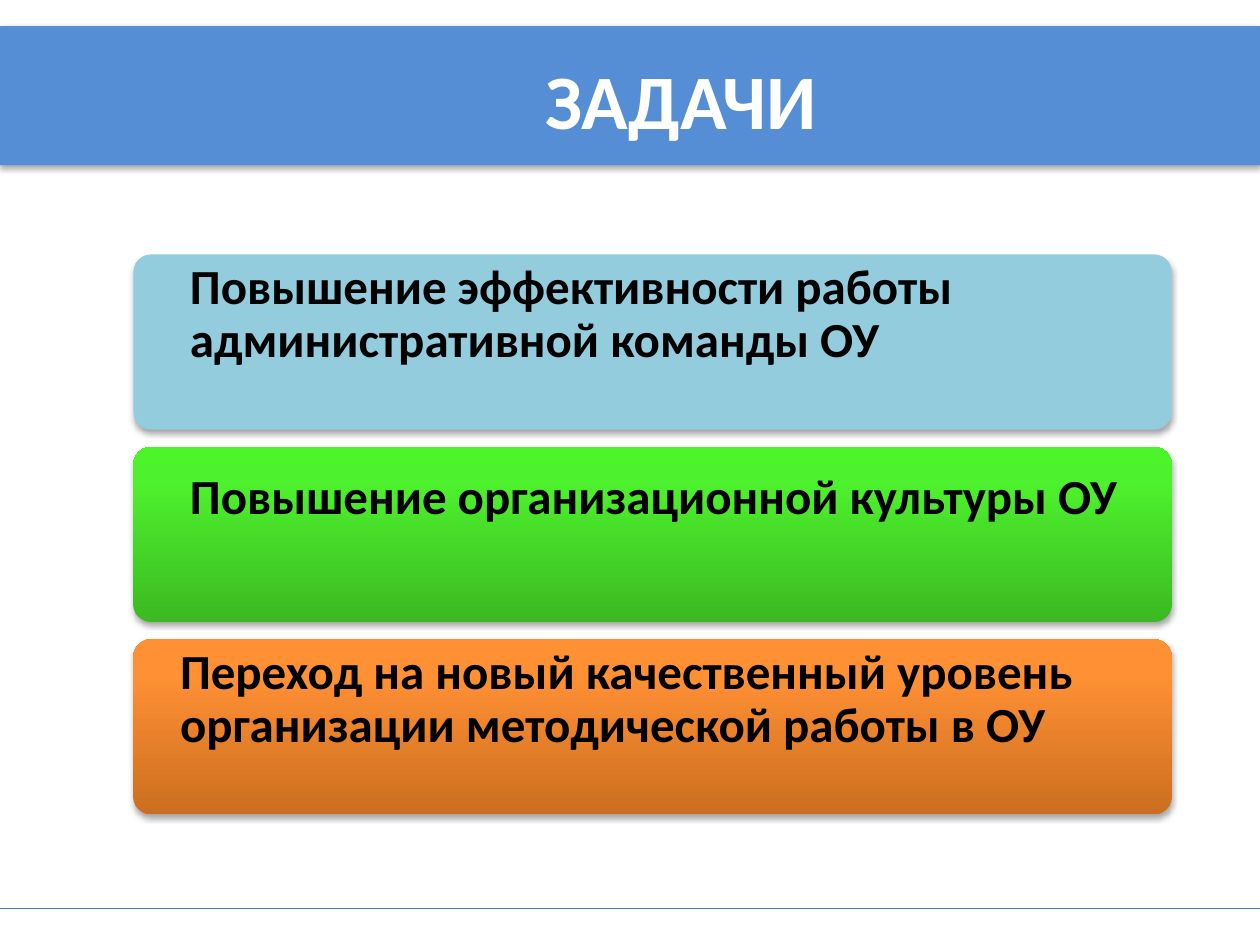
from lxml.etree import SubElement as Sub
from pptx import Presentation
from pptx.dml.color import RGBColor
from pptx.enum.shapes import MSO_CONNECTOR as Link, MSO_SHAPE as Form
from pptx.enum.text import MSO_ANCHOR as Anchor, PP_ALIGN as Align
from pptx.oxml.ns import qn
from pptx.util import Cm, Pt

WIDE, HIGH = 25.4, 19.05
LEFT, TOP, STEP = 2.69, 5.13, 3.88

# Stops run from the bottom edge to the top edge
TASKS = [
    ("Повышение эффективности работы административной команды ОУ",
     ["93CDDD"], 3.1, 0.03),
    ("Повышение организационной культуры ОУ",
     ["3CB923", "4EF12D", "4CF52A"], 3.1, 0.38),
    ("Переход на новый качественный уровень организации методической работы в ОУ",
     ["CC6E20", "FF9034", "FF9136"], 2.9, 0.03),
]


def color(code):
    return RGBColor.from_string(code)


def shade(shape):
    shape.shadow.inherit = False
    effects = shape._element.spPr.find(qn("a:effectLst"))
    outer = Sub(effects, qn("a:outerShdw"), blurRad="40000", dist="23000",
                dir="5400000", rotWithShape="0")
    black = Sub(outer, qn("a:srgbClr"), val="000000")
    Sub(black, qn("a:alpha"), val="35000")


def paint(shape, codes):
    if len(codes) == 1:
        shape.fill.solid()
        shape.fill.fore_color.rgb = color(codes[0])
        return
    shape.fill.gradient()
    shape.fill.gradient_angle = 90
    stops = shape._element.spPr.find(".//" + qn("a:gsLst"))
    stops.clear()
    for code, pos in zip(codes, (0, 80, 100)):
        stop = Sub(stops, qn("a:gs"), pos=str(pos * 1000))
        Sub(stop, qn("a:srgbClr"), val=code)


def panel(slide, form, x, y, w, h, codes):
    shape = slide.shapes.add_shape(form, Cm(x), Cm(y), Cm(w), Cm(h))
    shape.line.fill.background()
    paint(shape, codes)
    shade(shape)
    return shape


def label(slide, text, x, y, w, h, size, code):
    box = slide.shapes.add_textbox(Cm(x), Cm(y), Cm(w), Cm(h))
    box.text_frame.word_wrap = True
    para = box.text_frame.paragraphs[0]
    para.text = text
    font = para.font
    font.name, font.size, font.bold = "Calibri", Pt(size), True
    font.color.rgb = color(code)
    return box.text_frame, para


def rule(slide, y, code):
    line = slide.shapes.add_connector(Link.STRAIGHT, 0, Cm(y), Cm(WIDE), Cm(y))
    line.line.color.rgb = color(code)
    line.line.width = Pt(0.75)
    Sub(line._element.spPr, qn("a:effectLst"))


def main():
    deck = Presentation()
    deck.slide_width, deck.slide_height = Cm(WIDE), Cm(HIGH)
    slide = deck.slides.add_slide(deck.slide_layouts[6])

    # Title band and footer rule
    panel(slide, Form.RECTANGLE, 0, 0.53, WIDE, 2.8, ["558ED5"])
    rule(slide, 18.32, "4B7EBC")
    frame, para = label(slide, "ЗАДАЧИ", 2.3, 0.92, 22.86, 2.15, 44, "FFFFFF")
    frame.vertical_anchor = Anchor.MIDDLE
    para.alignment = Align.CENTER

    # Task cards
    for i, (text, codes, x, drop) in enumerate(TASKS):
        y = TOP + i * STEP
        card = panel(slide, Form.ROUNDED_RECTANGLE, LEFT, y, 20.93, 3.53, codes)
        card.adjustments[0] = 0.1
        frame, para = label(slide, text, x, y + drop, 20.52, 2.4, 28, "000000")
        para.line_spacing = 0.9
        para._p.get_or_add_pPr().set("marL", str(Cm(0.48)))

    deck.save("out.pptx")


if __name__ == "__main__":
    main()
